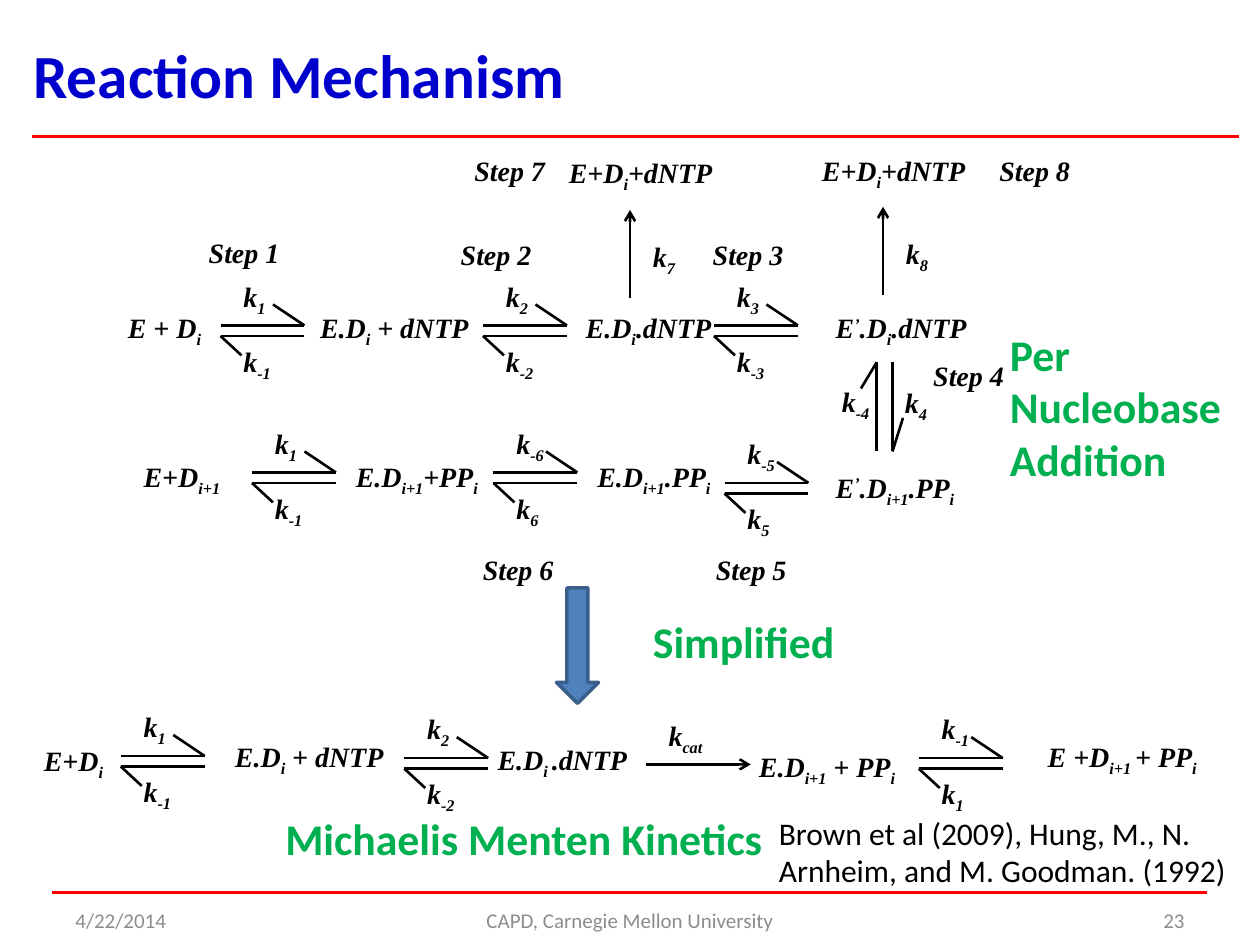
import pptx
import pptx.util
import pptx.dml.color
import pptx.enum.shapes
import pptx.enum.text
from lxml import etree
from pptx.oxml.ns import qn

hue = pptx.dml.color.RGBColor.from_string
align = pptx.enum.text.PP_ALIGN
deck = pptx.Presentation()
deck.slide_width = pptx.util.Inches(10)
deck.slide_height = pptx.util.Inches(7.5)
slide = deck.slides.add_slide(deck.slide_layouts[6])
col = deck.slide_width / 120
row = deck.slide_height / 90


def write(words, x, y, w=20, h=4.4, size=16, face="Times New Roman", tint="000000",
          bold=True, slant=True, side=align.LEFT, mid=False):
    box = slide.shapes.add_textbox(int(x * col), int(y * row), int(w * col), int(h * row))
    frame = box.text_frame
    frame.word_wrap = True
    if mid:
        frame.vertical_anchor = pptx.enum.text.MSO_ANCHOR.MIDDLE
    para = frame.paragraphs[0]
    para.alignment = side
    for part in words.split("|"):
        shift = {"_": "-25000", "^": "30000"}.get(part[0])
        run = para.add_run()
        run.text = part[1:] if shift else part
        font = run.font
        font.size = pptx.util.Pt(size)
        font.name = face
        font.bold = bold
        font.italic = slant
        font.color.rgb = hue(tint)
        if shift:
            run.font._element.set("baseline", shift)


def draw(x, y, to_x, to_y, tint="000000", wide=1.5, head=False):
    line = slide.shapes.add_connector(
        pptx.enum.shapes.MSO_CONNECTOR.STRAIGHT,
        int(x * col), int(y * row), int(to_x * col), int(to_y * row))
    line.line.color.rgb = hue(tint)
    line.line.width = pptx.util.Pt(wide)
    if head:
        etree.SubElement(line.line._get_or_add_ln(), qn("a:tailEnd"), type="arrow")
    etree.SubElement(line._element.spPr, qn("a:effectLst"))


draw(3, 13, 118, 13, tint="FF0000", wide=2.25)
draw(5, 85, 115, 85, tint="FF0000", wide=2.25)

for words, x, w, side in [
    ("4/22/2014", 6, 28, align.LEFT),
    ("CAPD, Carnegie Mellon University", 41, 38, align.CENTER),
    ("23", 86, 28, align.RIGHT),
]:
    write(words, x, 85.2, w, 4.8, size=12, face="Calibri", tint="8C8C8C",
          bold=False, slant=False, side=side, mid=True)

write("Reaction Mechanism", 2, 3, 110, 8.3, size=35, face="Calibri",
      tint="0000CC", slant=False)

for words, x, y in [
    ("E + D|_i", 11, 29),
    ("E.D|_i| + dNTP", 29.3, 29),
    ("E.D|_i|.dNTP", 54.6, 29),
    ("E|^’|.D|_i|.dNTP", 78.4, 29),
    ("E+D|_i|+dNTP", 53, 14.2),
    ("E+D|_i|+dNTP", 77.1, 14),
    ("E|^’|.D|_i+1|.PP|_i", 78.4, 44.2),
    ("E.D|_i+1|.PP|_i", 55.7, 43.2),
    ("E.D|_i+1|+PP|_i", 32.7, 43.2),
    ("E+D|_i+1", 12.5, 43.2),
    ("E+D|_i", 3, 70.2),
    ("E.D|_i| + dNTP", 21.2, 69.8),
    ("E.D|_i |.dNTP", 46.2, 70.1),
    ("E.D|_i+1| + PP|_i", 71.1, 70.8),
    ("E +D|_i+1 |+ PP|_i", 98.6, 69.8),
]:
    write(words, x, y)

for x, y, top, low in [
    (21, 31, "1", "-1"), (46, 31, "2", "-2"), (68, 31, "3", "-3"),
    (24, 45, "1", "-1"), (47, 45, "-6", "6"), (69, 46, "-5", "5"),
    (11.5, 72, "1", "-1"), (38.5, 72.2, "2", "-2"), (87.5, 72.2, "-1", "1"),
]:
    draw(x, y, x + 8, y)
    draw(x, y + 1, x + 8, y + 1)
    draw(x, y + 1, x + 2, y + 2.85)
    draw(x + 8, y, x + 5, y - 2)
    write("k|_" + top, x + 1, y - 5, 7)
    write("k|_" + low, x + 1, y + 1.2, 7)

for x, y, to_x, to_y in [
    (83.5, 34.5, 83.5, 43), (85, 34.5, 85, 43),
    (83.5, 34.5, 82, 37), (85, 43, 86, 39.8),
]:
    draw(x, y, to_x, to_y)

for x, y, to_x, to_y in [
    (60, 28.4, 60, 20), (84.1, 28.1, 84.1, 19.7), (61.5, 72.8, 71.5, 72.8),
]:
    draw(x, y, to_x, to_y, head=True)

for mark, x, y in [
    ("7", 61, 22.2), ("8", 85.1, 21.9), ("-4", 79, 36),
    ("4", 85, 36.1), ("cat", 62.5, 67.8),
]:
    write("k|_" + mark, x, y, 7)

for num, x, y in [
    (1, 18.7, 21.8), (2, 42.7, 22), (3, 66.7, 22), (4, 87.7, 33.6),
    (5, 67, 52), (6, 44.8, 52), (7, 44, 14), (8, 94, 14),
]:
    write(f"Step {num}", x, y, 10)

for words, x, y, w, h in [
    ("Per Nucleobase Addition", 95, 30.6, 25, 16.3),
    ("Simplified", 61, 58, 25, 6.2),
    ("Michaelis Menten Kinetics", 26, 76.7, 73, 6.2),
]:
    write(words, x, y, w, h, size=25, face="Calibri", tint="00B050", slant=False)

down = slide.shapes.add_shape(
    pptx.enum.shapes.MSO_SHAPE.DOWN_ARROW,
    int(53 * col), int(56 * row), int(4 * col), int(11 * row))
down.shadow.inherit = False
down.fill.solid()
down.fill.fore_color.rgb = hue("4F81BD")
down.line.color.rgb = hue("3A5F8C")
down.line.width = pptx.util.Pt(2)

write("Brown et al (2009), Hung, M., N. Arnheim, and M. Goodman. (1992)",
      73, 76.9, 47, 8, size=18, face="Calibri", bold=False, slant=False)

deck.save("out.pptx")
